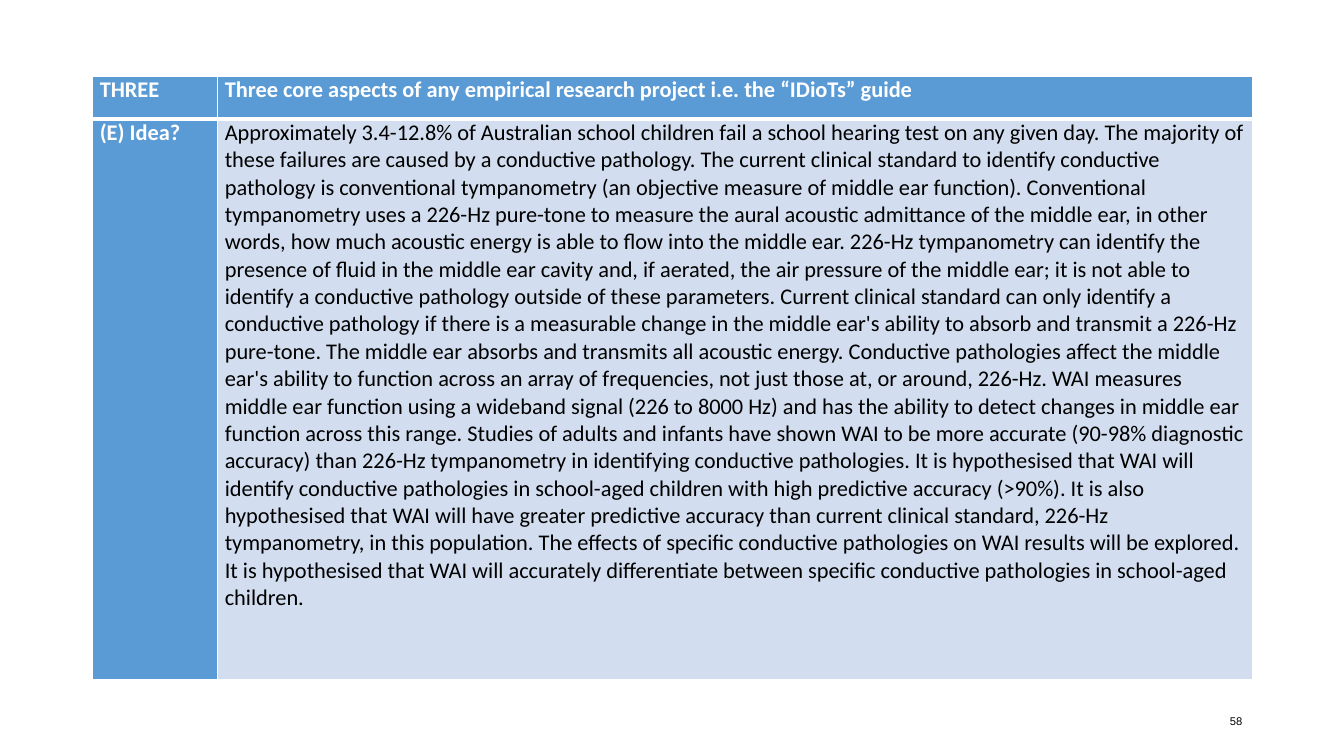
"""Build the slide with the research idea table."""
from lxml import etree
from pptx import Presentation
from pptx.dml.color import RGBColor
from pptx.enum.text import MSO_ANCHOR, PP_ALIGN
from pptx.oxml.ns import qn
from pptx.util import Inches, Pt

HEADER = ("THREE", "Three core aspects of any empirical research project i.e. the “IDioTs” guide")
IDEA_LABEL = "(E) Idea?"
IDEA_SENTENCES = [
    "Approximately 3.4-12.8% of Australian school children fail a school hearing test on any given day.",
    "The majority of these failures are caused by a conductive pathology.",
    "The current clinical standard to identify conductive pathology is conventional tympanometry "
    "(an objective measure of middle ear function).",
    "Conventional tympanometry uses a 226-Hz pure-tone to measure the aural acoustic admittance of the "
    "middle ear, in other words, how much acoustic energy is able to flow into the middle ear.",
    "226-Hz tympanometry can identify the presence of fluid in the middle ear cavity and, if aerated, "
    "the air pressure of the middle ear; it is not able to identify a conductive pathology outside of "
    "these parameters.",
    "Current clinical standard can only identify a conductive pathology if there is a measurable change "
    "in the middle ear's ability to absorb and transmit a 226-Hz pure-tone.",
    "The middle ear absorbs and transmits all acoustic energy.",
    "Conductive pathologies affect the middle ear's ability to function across an array of frequencies, "
    "not just those at, or around, 226-Hz.",
    "WAI measures middle ear function using a wideband signal (226 to 8000 Hz) and has the ability to "
    "detect changes in middle ear function across this range.",
    "Studies of adults and infants have shown WAI to be more accurate (90-98% diagnostic accuracy) than "
    "226-Hz tympanometry in identifying conductive pathologies.",
    "It is hypothesised that WAI will identify conductive pathologies in school-aged children with high "
    "predictive accuracy (>90%).",
    "It is also hypothesised that WAI will have greater predictive accuracy than current clinical "
    "standard, 226-Hz tympanometry, in this population.",
    "The effects of specific conductive pathologies on WAI results will be explored.",
    "It is hypothesised that WAI will accurately differentiate between specific conductive pathologies "
    "in school-aged children.",
]
ROWS = (HEADER, (IDEA_LABEL, " ".join(IDEA_SENTENCES)))
PAGE_NUMBER = "58"
COLUMN_WIDTHS = (1.24, 10.26)
ROW_HEIGHTS = (0.42, 5.56)
WHITE, BLACK, BLUE, PALE_BLUE = "FFFFFF", "000000", "5B9BD5", "D2DEEF"
THIN, THICK = 1, 3


def color(value):
    return RGBColor.from_string(value)


def style_text(paragraph, font_name, size, font_color, bold=False):
    for run in paragraph.runs:
        run.font.name = font_name
        run.font.size = Pt(size)
        run.font.bold = bold
        run.font.color.rgb = color(font_color)


def add_borders(cell, top, bottom):
    properties = cell._tc.get_or_add_tcPr()
    for side, width in (("L", THIN), ("R", THIN), ("T", top), ("B", bottom)):
        line = etree.SubElement(properties, qn(f"a:ln{side}"), w=str(Pt(width)))
        fill = etree.SubElement(line, qn("a:solidFill"))
        etree.SubElement(fill, qn("a:srgbClr"), val=WHITE)


def add_idea_table(slide):
    frame = slide.shapes.add_table(
        len(ROWS), len(COLUMN_WIDTHS), Inches(0.92), Inches(0.76),
        Inches(sum(COLUMN_WIDTHS)), Inches(sum(ROW_HEIGHTS)))
    table = frame.table
    for column, width in zip(table.columns, COLUMN_WIDTHS):
        column.width = Inches(width)
    for row, height in zip(table.rows, ROW_HEIGHTS):
        row.height = Inches(height)
    for r, texts in enumerate(ROWS):
        for c, text in enumerate(texts):
            cell = table.cell(r, c)
            is_body = r > 0 and c > 0
            cell.margin_left = cell.margin_right = Inches(0.07)
            cell.margin_top = cell.margin_bottom = 0
            add_borders(cell, THICK if r else THIN, THIN if r else THICK)
            cell.fill.solid()
            cell.fill.fore_color.rgb = color(PALE_BLUE if is_body else BLUE)
            cell.text_frame.text = text
            style_text(cell.text_frame.paragraphs[0], "Calibri", 16,
                       BLACK if is_body else WHITE, not is_body)


def add_page_number(slide):
    box = slide.shapes.add_textbox(Inches(9.42), Inches(6.95), Inches(3), Inches(0.4))
    frame = box.text_frame
    frame.word_wrap = True
    frame.vertical_anchor = MSO_ANCHOR.MIDDLE
    frame.text = PAGE_NUMBER
    frame.paragraphs[0].alignment = PP_ALIGN.RIGHT
    style_text(frame.paragraphs[0], "Arial", 8, BLACK)


def main():
    deck = Presentation()
    deck.slide_width, deck.slide_height = Inches(13.33), Inches(7.5)
    slide = deck.slides.add_slide(deck.slide_layouts[6])
    add_idea_table(slide)
    add_page_number(slide)
    deck.save("out.pptx")


if __name__ == "__main__":
    main()
